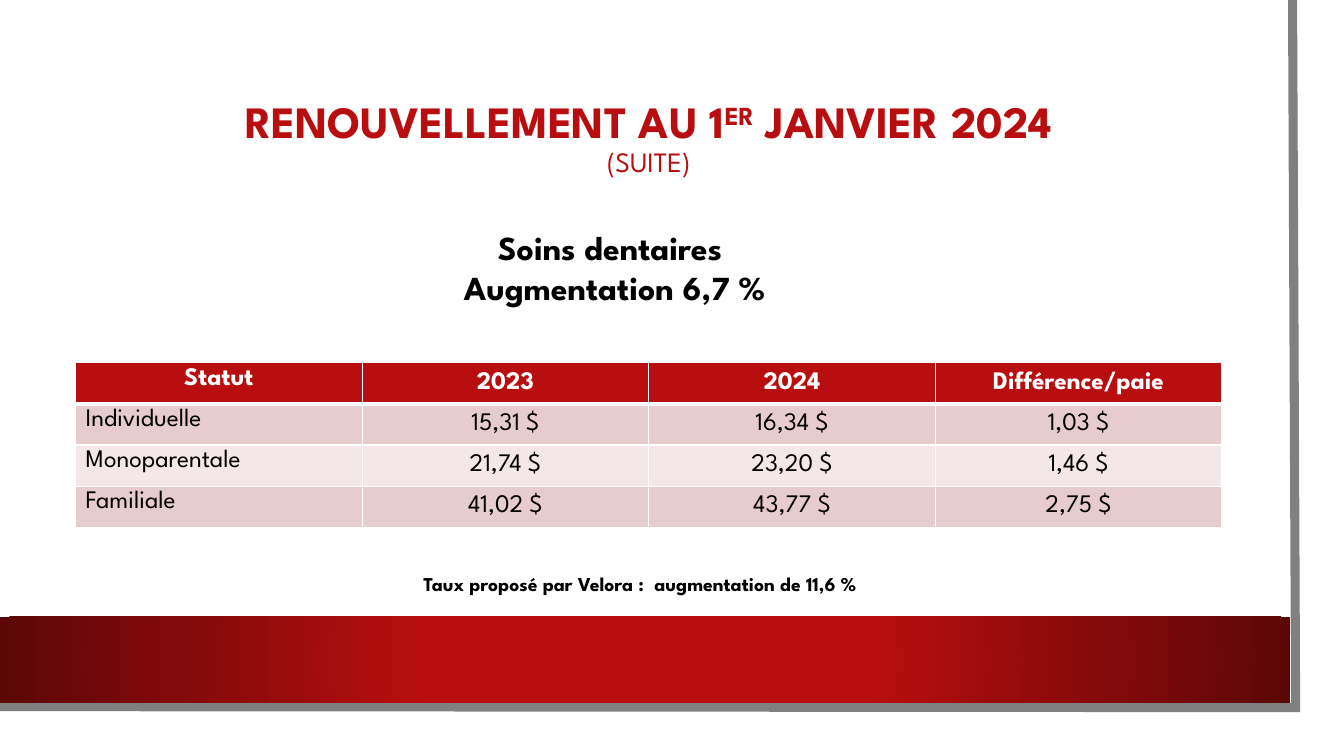
import pptx
import pptx.dml.color
import pptx.enum.shapes
import pptx.enum.text
import pptx.oxml
import pptx.oxml.ns
import pptx.util
from dataclasses import dataclass

# Content
TITLE = [("RENOUVELLEMENT AU 1", "main"), ("ER", "raised"),
         (" JANVIER 2024", "main"), ("(SUITE)", "sub")]
SUBJECT = ["Soins dentaires ", "Augmentation 6,7 %"]
RATES = [
    ("Statut", "2023", "2024", "Différence/paie"),
    ("Individuelle", "15,31 $", "16,34 $", "1,03 $"),
    ("Monoparentale", "21,74 $", "23,20 $", "1,46 $"),
    ("Familiale", "41,02 $", "43,77 $", "2,75 $"),
]
FOOTNOTE = "Taux proposé par Velora :  augmentation de 11,6 %"


@dataclass(frozen=True)
class Theme:
    font: str = "League Spartan"
    red: str = "B80E0F"
    dark_red: str = "5C0707"
    white: str = "FFFFFF"
    black: str = "000000"
    grey: str = "808080"
    bands: tuple = ("E6CCCC", "F3E7E7")
    title: int = 32
    subtitle: int = 20
    subject: int = 24
    cell: int = 18
    note: int = 14


THEME = Theme()
inch = pptx.util.Inches
Pt = pptx.util.Pt
CENTER = pptx.enum.text.PP_ALIGN.CENTER
MIDDLE = pptx.enum.text.MSO_ANCHOR.MIDDLE
RECTANGLE = pptx.enum.shapes.MSO_SHAPE.RECTANGLE
NS = pptx.oxml.ns.nsdecls("a")

# Page grid
WIDTH, HEIGHT = 13.33, 7.5
LEFT, CONTENT_WIDTH = 0.75, 11.37
TABLE_TOP, TABLE_HEIGHT = 3.6, 1.63
BAND_TOP, BAND_WIDTH, BAND_HEIGHT = 6.12, 12.8, 0.85


def rgb(value):
    return pptx.dml.color.RGBColor.from_string(value)


def add_run(paragraph, text, size, color=THEME.black, bold=True):
    run = paragraph.add_run()
    run.text = text
    run.font.name = THEME.font
    run.font.size = Pt(size)
    run.font.bold = bold
    run.font.color.rgb = rgb(color)
    return run


def add_lines(left, top, width, height, lines, size, indent=0):
    box = slide.shapes.add_textbox(inch(left), inch(top), inch(width), inch(height))
    frame = box.text_frame
    frame.word_wrap = True
    for number, line in enumerate(lines):
        paragraph = frame.add_paragraph() if number else frame.paragraphs[0]
        paragraph.alignment = CENTER
        if indent:
            paragraph._p.get_or_add_pPr().set("marL", str(inch(indent)))
        add_run(paragraph, line, size)


def set_borders(cell, bottom):
    properties = cell._tc.get_or_add_tcPr()
    widths = {"lnL": 1, "lnR": 1, "lnT": 1, "lnB": bottom}
    for position, (side, points) in enumerate(widths.items()):
        properties.insert(position, pptx.oxml.parse_xml(
            f'<a:{side} {NS} w="{Pt(points)}"><a:solidFill>'
            f'<a:srgbClr val="{THEME.white}"/></a:solidFill></a:{side}>'))


deck = pptx.Presentation()
deck.slide_width, deck.slide_height = inch(WIDTH), inch(HEIGHT)
slide = deck.slides.add_slide(deck.slide_layouts[5])
slide.background.fill.solid()
slide.background.fill.fore_color.rgb = rgb(THEME.white)

# Grey edge of the sheet
outline = slide.shapes.build_freeform(inch(12.82), 0, scale=1.0)
outline.add_line_segments(
    [(inch(12.85), inch(7.02)), (inch(-0.03), inch(7.01))], close=False)
edge = outline.convert_to_shape()
edge.shadow.inherit = False
edge.fill.background()
edge.line.color.rgb = rgb(THEME.grey)
edge.line.width = Pt(6.5)
edge.line._get_or_add_ln().append(
    pptx.oxml.parse_xml(f'<a:miter {NS} lim="800000"/>'))

# Bottom band, darker towards both ends
band = slide.shapes.add_shape(
    RECTANGLE, 0, inch(BAND_TOP), inch(BAND_WIDTH), inch(BAND_HEIGHT))
band.shadow.inherit = False
band.line.fill.background()
band._element.spPr.insert(2, pptx.oxml.parse_xml(
    f'<a:gradFill {NS} rotWithShape="1"><a:gsLst>'
    f'<a:gs pos="34000"><a:srgbClr val="{THEME.red}"/></a:gs>'
    f'<a:gs pos="100000"><a:srgbClr val="{THEME.dark_red}"/></a:gs></a:gsLst>'
    '<a:path path="circle"><a:fillToRect l="50000" t="50000" r="50000" b="50000"/>'
    '</a:path></a:gradFill>'))

# Title
title = slide.shapes.title
title.left, title.top = inch(LEFT), inch(0.75)
title.width, title.height = inch(CONTENT_WIDTH), inch(1.26)
title.text_frame.auto_size = pptx.enum.text.MSO_AUTO_SIZE.NONE
title.text_frame.vertical_anchor = MIDDLE
heading = title.text_frame.paragraphs[0]
heading.alignment = CENTER
heading.line_spacing = 0.9
for words, role in TITLE:
    is_sub = role == "sub"
    if is_sub:
        heading.add_line_break()
    part = add_run(heading, words, THEME.subtitle if is_sub else THEME.title,
                   THEME.red, not is_sub)
    if role == "raised":
        part.font._element.set("baseline", "30000")

# Rate table
rates = slide.shapes.add_table(
    len(RATES), len(RATES[0]), inch(LEFT), inch(TABLE_TOP),
    inch(CONTENT_WIDTH), inch(TABLE_HEIGHT)).table
for row, values in enumerate(RATES):
    header = row == 0
    for column, value in enumerate(values):
        cell = rates.cell(row, column)
        cell.fill.solid()
        cell.fill.fore_color.rgb = rgb(
            THEME.red if header else THEME.bands[(row - 1) % 2])
        set_borders(cell, 3 if header else 1)
        entry = cell.text_frame.paragraphs[0]
        if header or column:
            entry.alignment = CENTER
        if column:
            cell.vertical_anchor = MIDDLE
        add_run(entry, value, THEME.cell,
                THEME.white if header else THEME.black, header)

# Subject and footnote
add_lines(1.82, 2.2, 8.48, 0.91, SUBJECT, THEME.subject, indent=0.07)
add_lines(3.2, 5.62, 6.3, 0.57, [FOOTNOTE], THEME.note)

deck.save("out.pptx")
